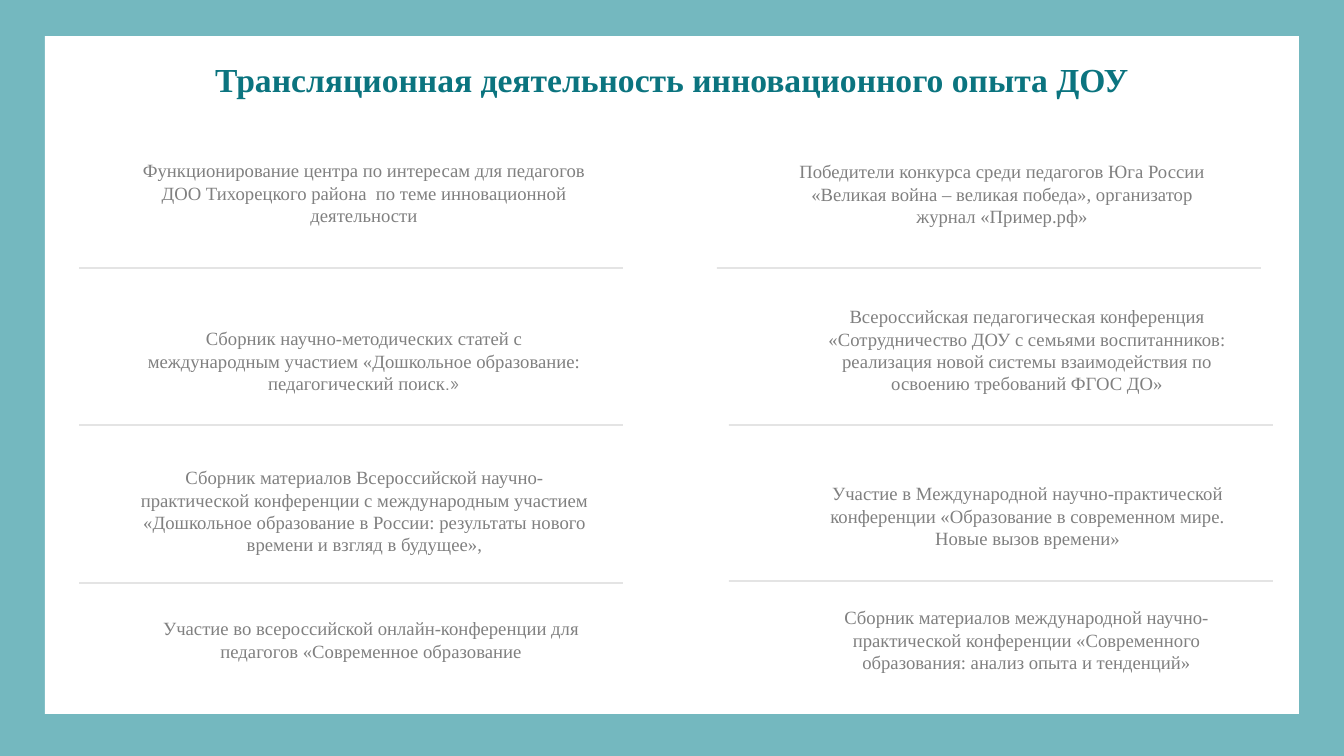
from lxml import etree
from pptx import Presentation
from pptx.dml.color import RGBColor
from pptx.enum.shapes import MSO_CONNECTOR, MSO_SHAPE
from pptx.enum.text import MSO_ANCHOR, MSO_AUTO_SIZE, PP_ALIGN
from pptx.oxml.ns import qn
from pptx.util import Pt

RECTANGLE = MSO_SHAPE.RECTANGLE
STRAIGHT = MSO_CONNECTOR.STRAIGHT
CENTER = PP_ALIGN.CENTER
TOP = MSO_ANCHOR.TOP
NO_FIT = MSO_AUTO_SIZE.NONE

EMU_PER_PX = 914400 / 67.2
SERIF = "Times New Roman"
SANS = "Manrope"
COLORS = {
    "background": "74B8BF",
    "panel": "FFFFFF",
    "title": "0B747F",
    "body": "808080",
    "divider": "000000",
}
TITLE_ONLY_LAYOUT = 5
DIVIDER_LENGTH = 544
DIVIDER_OPACITY = 30

# Left and top of each divider
DIVIDERS = [
    (79, 268), (79, 425), (79, 583),
    (717, 268), (729, 425), (729, 581),
]

# Box (left, top, width, height) and text runs with their fonts
ACTIVITIES = [
    # Left column
    ((137, 159, 454, 68), [
        ("Функционирование центра по интересам для педагогов ДОО Тихорецкого "
         "района  по теме инновационной деятельности", SERIF)]),
    ((144, 327, 440, 68), [
        ("Сборник научно-методических статей с международным участием "
         "«Дошкольное образование: педагогический поиск", SERIF),
        (".»", SANS)]),
    ((137, 466, 455, 91), [
        ("Сборник материалов Всероссийской научно-практической конференции "
         "с международным участием «Дошкольное образование в России: "
         "результаты нового времени и взгляд в будущее»,", SERIF)]),
    ((150, 617, 442, 45), [
        ("Участие во всероссийской онлайн-конференции для педагогов "
         "«Современное образование", SERIF)]),
    # Right column
    ((782, 160, 440, 68), [
        ("Победители конкурса среди педагогов Юга России «Великая война – "
         "великая победа», организатор журнал «Пример.рф»", SERIF)]),
    ((807, 305, 440, 91), [
        ("Всероссийская педагогическая конференция «Сотрудничество ДОУ "
         "с семьями воспитанников: реализация новой системы взаимодействия "
         "по освоению требований ФГОС ДО»", SERIF)]),
    ((809, 482, 437, 68), [
        ("Участие в Международной научно-практической конференции "
         "«Образование в современном мире. Новые вызов времени»", SERIF)]),
    ((808, 606, 437, 68), [
        ("Сборник материалов международной научно-практической конференции "
         "«Современного образования: анализ опыта и тенденций»", SERIF)]),
]


def px(*lengths):
    return [round(length * EMU_PER_PX) for length in lengths]


def color(name):
    return RGBColor.from_string(COLORS[name])


def add_panel(slide, box):
    panel = slide.shapes.add_shape(RECTANGLE, *px(*box))
    panel.shadow.inherit = False
    panel.fill.solid()
    panel.fill.fore_color.rgb = color("panel")
    panel.line.fill.background()
    return panel


def set_title(slide, text, box):
    title = slide.shapes.title
    title.left, title.top, title.width, title.height = px(*box)
    frame = title.text_frame
    frame.text = text
    frame.auto_size = NO_FIT
    frame.vertical_anchor = TOP
    paragraph = frame.paragraphs[0]
    paragraph.alignment = CENTER
    paragraph.font.name = SERIF
    paragraph.font.size = Pt(36)
    paragraph.font.bold = True
    paragraph.font.color.rgb = color("title")
    return title


def add_divider(slide, left, top):
    divider = slide.shapes.add_connector(
        STRAIGHT, *px(left, top, left + DIVIDER_LENGTH, top))
    divider.line.width = Pt(0.75)
    divider.line.color.rgb = color("divider")
    # Transparency and no shadow
    properties = divider.element.spPr
    fill_color = properties.find(".//" + qn("a:srgbClr"))
    etree.SubElement(fill_color, qn("a:alpha"), val=str(DIVIDER_OPACITY * 1000))
    etree.SubElement(properties, qn("a:effectLst"))


def add_activity(slide, box, runs):
    frame = slide.shapes.add_textbox(*px(*box)).text_frame
    frame.word_wrap = True
    frame.margin_left = frame.margin_right = 0
    frame.margin_top = frame.margin_bottom = 0
    paragraph = frame.paragraphs[0]
    paragraph.alignment = CENTER
    paragraph.font.size = Pt(20)
    paragraph.font.color.rgb = color("body")
    for text, font_name in runs:
        run = paragraph.add_run()
        run.text = text
        run.font.name = font_name


def main():
    presentation = Presentation()
    presentation.slide_width, presentation.slide_height = px(1344, 756)
    slide = presentation.slides.add_slide(
        presentation.slide_layouts[TITLE_ONLY_LAYOUT])
    slide.background.fill.solid()
    slide.background.fill.fore_color.rgb = color("background")

    # White panel with the title in front of it
    panel = add_panel(slide, (45, 36, 1254, 678))
    title = set_title(
        slide, "Трансляционная деятельность инновационного опыта ДОУ",
        (45, 56, 1254, 48))
    panel.element.addnext(title.element)

    # Dividers and activities in two columns
    for left, top in DIVIDERS:
        add_divider(slide, left, top)
    for box, runs in ACTIVITIES:
        add_activity(slide, box, runs)

    presentation.save("out.pptx")


if __name__ == "__main__":
    main()
